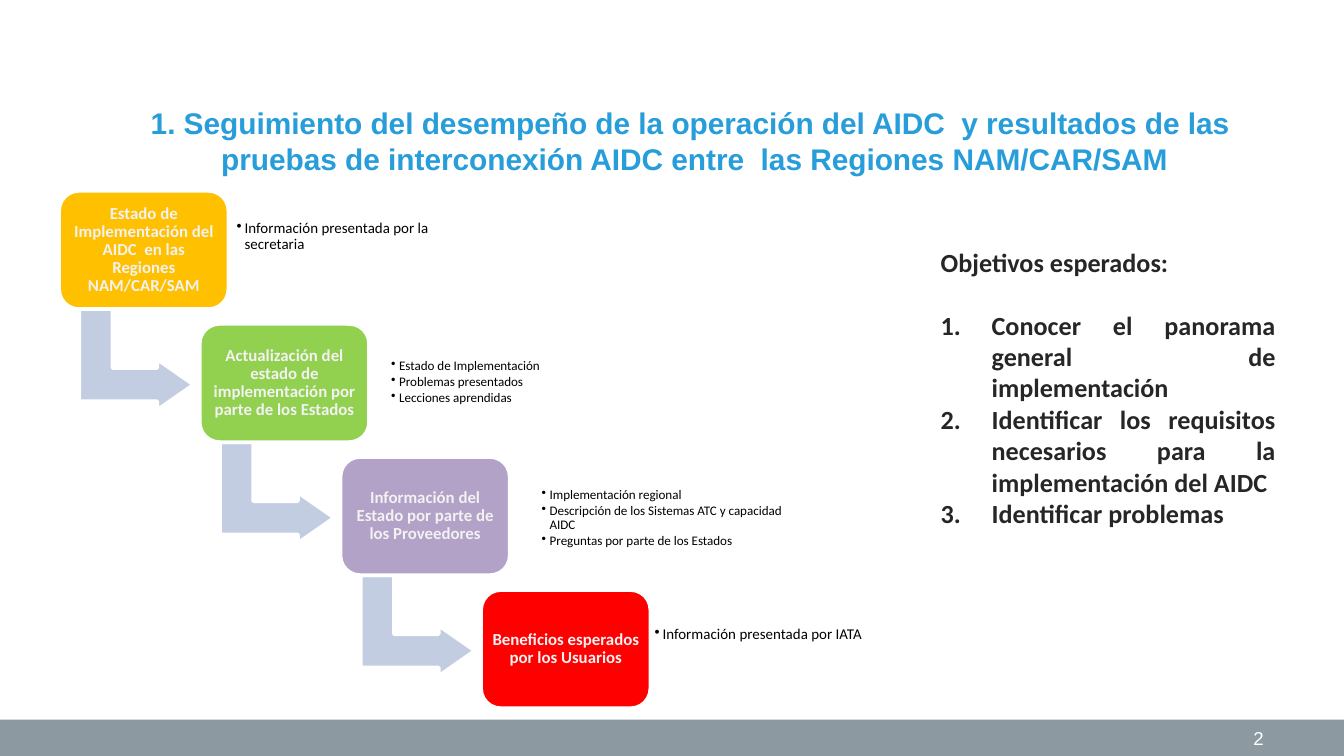
"""Build the AIDC follow-up slide: a four-step staircase beside its expected objectives."""
from lxml import etree
from pptx import Presentation
from pptx.dml.color import RGBColor
from pptx.enum.shapes import MSO_SHAPE
from pptx.enum.text import MSO_ANCHOR, PP_ALIGN
from pptx.oxml.ns import qn
from pptx.util import Inches, Pt

RECTANGLE, ROUNDED = MSO_SHAPE.RECTANGLE, MSO_SHAPE.ROUNDED_RECTANGLE
BENT_ARROW = MSO_SHAPE.BENT_UP_ARROW
TOP, MIDDLE = MSO_ANCHOR.TOP, MSO_ANCHOR.MIDDLE
LEFT, CENTER, RIGHT, JUSTIFY = PP_ALIGN.LEFT, PP_ALIGN.CENTER, PP_ALIGN.RIGHT, PP_ALIGN.JUSTIFY

BLUE = RGBColor(0x27, 0x9D, 0xD9)
GREY = RGBColor(0x8C, 0x99, 0xA1)
PALE_BLUE = RGBColor(0xC2, 0xCD, 0xE1)
WHITE = RGBColor(0xFF, 0xFF, 0xFF)
OFF_WHITE = RGBColor(0xF2, 0xF2, 0xF2)
BLACK = RGBColor(0, 0, 0)
CHARCOAL = RGBColor(0x26, 0x26, 0x26)
AMBER = RGBColor(0xFF, 0xC0, 0x00)
GREEN = RGBColor(0x92, 0xD0, 0x50)
PURPLE = RGBColor(0xB3, 0xA2, 0xC7)
RED = RGBColor(0xFF, 0, 0)

TITLE = ("1. Seguimiento del desempeño de la operación del AIDC  y resultados de las \v"
         "pruebas de interconexión AIDC entre  las Regiones NAM/CAR/SAM")
STEPS = [
    {"label": "Estado de Implementación del AIDC  en las Regiones NAM/CAR/SAM", "fill": AMBER,
     "notes": ["Información presentada por la secretaria"],
     "area": (1.72, 1.5, 1.81, 0.52), "size": 8},
    {"label": "Actualización del estado de implementación por parte de los Estados", "fill": GREEN,
     "notes": ["Estado de Implementación", "Problemas presentados", "Lecciones aprendidas"],
     "area": (2.87, 2.49, 2.98, 0.71), "size": 7},
    {"label": "Información del Estado por parte de los Proveedores", "fill": PURPLE,
     "notes": ["Implementación regional", "Descripción de los Sistemas ATC y capacidad AIDC",
               "Preguntas por parte de los Estados"],
     "area": (3.99, 3.5, 1.99, 0.71), "size": 7},
    {"label": "Beneficios esperados por los Usuarios", "fill": RED,
     "notes": ["Información presentada por IATA"],
     "area": (4.83, 4.4, 1.81, 0.65), "size": 8},
]
HEADING = "Objetivos esperados:"
OBJECTIVES = ["Conocer el panorama general de implementación",
              "Identificar los requisitos necesarios para la implementación del AIDC",
              "Identificar problemas"]

WIDTH = 10
HEIGHT = WIDTH * 9 / 16
BAR = 0.27
STEP_LEFT, STEP_TOP, STEP_WIDTH, STEP_HEIGHT = 0.44, 1.42, 1.26, 0.88
STEP_RIGHTWARD, STEP_DOWN = 3.14 / 3, 0.99


def inches(*lengths):
    return [Inches(length) for length in lengths]


def add_shape(slide, preset, area, fill, line=None):
    shape = slide.shapes.add_shape(preset, *inches(*area))
    shape.shadow.inherit = False
    shape.fill.solid()
    shape.fill.fore_color.rgb = fill
    if line is None:
        shape.line.fill.background()
    else:
        shape.line.color.rgb = line
        shape.line.width = Pt(2)
    return shape


def add_bullet(paragraph, indent, tag, **attributes):
    properties = paragraph._p.get_or_add_pPr()
    properties.set("marL", str(Inches(indent)))
    properties.set("indent", str(-Inches(indent)))
    etree.SubElement(properties, qn(tag), attributes)


def write(shape, lines, size, color, align, font="Calibri", bold=False, anchor=MIDDLE, inset=0.04):
    frame = shape.text_frame
    frame.word_wrap = True
    frame.vertical_anchor = anchor
    frame.margin_left = frame.margin_right = Inches(inset)
    frame.margin_top = frame.margin_bottom = Inches(min(inset, 0.05))
    frame.text = "\n".join(lines)
    for paragraph in frame.paragraphs:
        paragraph.alignment = align
        for span in paragraph.runs:
            span.font.name, span.font.size, span.font.bold = font, Pt(size), bold
            span.font.color.rgb = color
    return frame


def add_text(slide, area, lines, *style, **options):
    return write(slide.shapes.add_textbox(*inches(*area)), lines, *style, **options)


def add_step(slide, index, step):
    left = STEP_LEFT + index * STEP_RIGHTWARD
    top = STEP_TOP + index * STEP_DOWN
    if index < len(STEPS) - 1:
        arrow = add_shape(slide, BENT_ARROW, (left + 0.2, top + 0.83, 0.75, 0.85), PALE_BLUE, WHITE)
        arrow.rotation = 90
        for position, value in enumerate((0.33, 0.25, 0.36)):
            arrow.adjustments[position] = value
    box = add_shape(slide, ROUNDED, (left, top, STEP_WIDTH, STEP_HEIGHT), step["fill"], WHITE)
    frame = write(box, [step["label"]], 9, OFF_WHITE, CENTER, bold=True)
    frame.paragraphs[0].line_spacing = 0.9

    notes = add_text(slide, step["area"], step["notes"], step["size"], BLACK, LEFT)
    for paragraph in notes.paragraphs:
        add_bullet(paragraph, 0.06, "a:buChar", char="•")
        paragraph.line_spacing = 0.9
        paragraph.space_after = Pt(1)


def add_objectives(slide):
    frame = add_text(slide, (6.9, 1.56, 2.69, 3.16), [HEADING, *OBJECTIVES], 14, CHARCOAL, JUSTIFY,
                     bold=True, anchor=TOP, inset=0.1)
    frame.margin_top = Inches(0.27)
    heading, *objectives = frame.paragraphs
    heading.space_after = Pt(17)
    for paragraph in objectives:
        add_bullet(paragraph, 0.38, "a:buAutoNum", type="arabicPeriod")


def main():
    deck = Presentation()
    deck.slide_width, deck.slide_height = inches(WIDTH, HEIGHT)
    slide = deck.slides.add_slide(deck.slide_layouts[5])
    add_shape(slide, RECTANGLE, (0, HEIGHT - BAR, WIDTH, BAR), GREY)

    title = slide.shapes.title
    title.left, title.top, title.width, title.height = inches(0.67, 0.73, 9, 0.94)
    write(title, [TITLE], 16, BLUE, CENTER, font="Arial", bold=True, anchor=TOP, inset=0.1)

    add_text(slide, (7.17, HEIGHT - BAR, 2.33, BAR), ["2"], 10, WHITE, RIGHT,
             font="Arial", inset=0.1)
    for index, step in enumerate(STEPS):
        add_step(slide, index, step)
    add_objectives(slide)
    deck.save("out.pptx")


if __name__ == "__main__":
    main()
